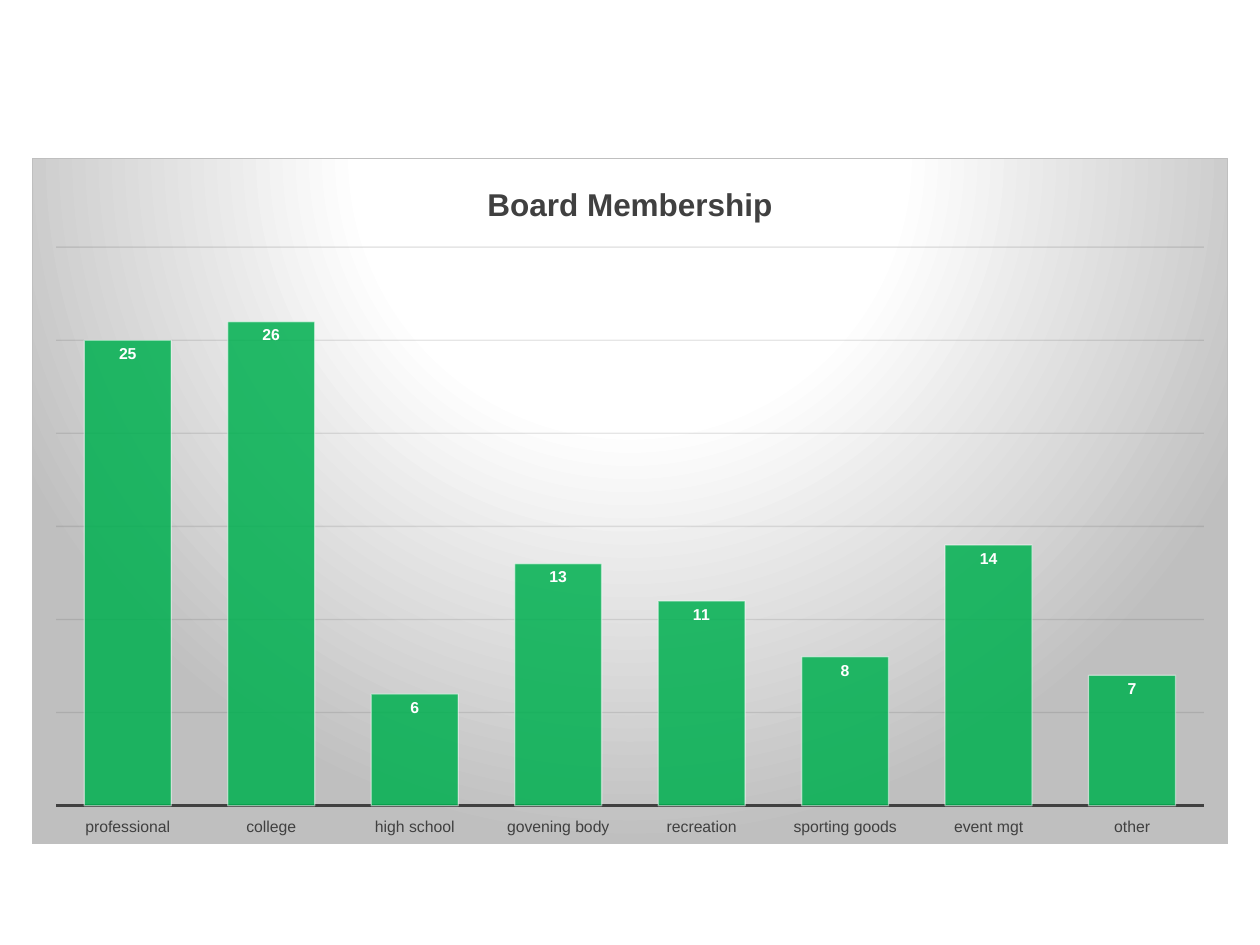
from lxml import etree
from pptx import Presentation
from pptx.chart.data import CategoryChartData
from pptx.dml.color import RGBColor
from pptx.enum.chart import XL_CHART_TYPE, XL_LABEL_POSITION, XL_TICK_LABEL_POSITION, XL_TICK_MARK
from pptx.oxml import parse_xml
from pptx.oxml.ns import nsdecls, qn
from pptx.util import Inches, Pt

COLORS = {
    "white": "FFFFFF",
    "black": "000000",
    "ink": "404040",
    "grid": "0D0D0D",
    "silver": "BFBFBF",
    "green": "00B050",
}
MEMBERS = {
    "professional": 25,
    "college": 26,
    "high school": 6,
    "govening body": 13,
    "recreation": 11,
    "sporting goods": 8,
    "event mgt": 14,
    "other": 7,
}


class Deck:
    font = "Arial"

    def __init__(self, width, height):
        self.prs = Presentation()
        self.prs.slide_width = Inches(width)
        self.prs.slide_height = Inches(height)
        self.s = self.prs.slides.add_slide(self.prs.slide_layouts[6])

    def format_font(self, font, color, **values):
        for name, value in {"name": self.font, "bold": False, **values}.items():
            setattr(font, name, value)
        font.color.rgb = RGBColor.from_string(COLORS[color])

    def paint(self, fill, color, opacity=100):
        fill.solid()
        fill.fore_color.rgb = RGBColor.from_string(COLORS[color])
        if opacity < 100:
            clr = fill._xPr.find(qn("a:solidFill"))[0]
            etree.SubElement(clr, qn("a:alpha"), val=str(opacity * 1000))

    def line(self, line, color, width, opacity=100):
        line.width = Pt(width)
        self.paint(line.fill, color, opacity)

    def backdrop(self, chart, stops, border):
        gs = "".join(
            f'<a:gs pos="{pos * 1000}"><a:srgbClr val="{COLORS[color]}"/></a:gs>'
            for pos, color in stops
        )
        sp_pr = parse_xml(
            f'<c:spPr {nsdecls("c", "a")}><a:gradFill><a:gsLst>{gs}</a:gsLst>'
            '<a:path path="circle"><a:fillToRect l="50000" t="-80000" r="50000" b="180000"/></a:path>'
            f'</a:gradFill><a:ln w="{Pt(0.75)}"><a:solidFill><a:srgbClr val="{COLORS[border]}"/>'
            "</a:solidFill></a:ln></c:spPr>"
        )
        chart._chartSpace.find(qn("c:chart")).addnext(sp_pr)

    def place_plot(self, chart, x, y, w, h):
        area = chart._chartSpace.chart.plotArea
        for old in area.findall(qn("c:layout")):
            area.remove(old)
        sizes = "".join(f'<c:{k} val="{v}"/>' for k, v in zip("xywh", (x, y, w, h)))
        area.insert(0, parse_xml(
            f'<c:layout {nsdecls("c")}><c:manualLayout><c:layoutTarget val="inner"/>'
            f'<c:xMode val="edge"/><c:yMode val="edge"/>{sizes}</c:manualLayout></c:layout>'
        ))

    def column_chart(self, title, values, left, top, width, height):
        data = CategoryChartData()
        data.categories = list(values)
        data.add_series("Series 1", list(values.values()))
        chart = self.s.shapes.add_chart(
            XL_CHART_TYPE.COLUMN_CLUSTERED,
            Inches(left), Inches(top), Inches(width), Inches(height), data,
        ).chart
        chart.has_legend = False
        self.format_font(chart.font, "black", size=Pt(10))
        self.backdrop(chart, [(0, "white"), (39, "white"), (100, "silver")], "silver")
        self.place_plot(chart, 0.02, 0.13, 0.96, 0.815)

        chart.has_title = True
        p = chart.chart_title.text_frame.paragraphs[0]
        r = p.add_run()
        r.text = title
        self.format_font(r.font, "ink", size=Pt(18), bold=True)
        chart.chart_title.include_in_layout = False

        cat, val = chart.category_axis, chart.value_axis
        for axis, formats in (
            (cat, {"major_tick_mark": XL_TICK_MARK.NONE, "minor_tick_mark": XL_TICK_MARK.NONE,
                   "tick_label_position": XL_TICK_LABEL_POSITION.LOW}),
            (val, {"visible": False, "minimum_scale": 0, "maximum_scale": 30, "major_unit": 5}),
        ):
            for name, value in formats.items():
                setattr(axis, name, value)
        self.format_font(cat.tick_labels.font, "ink", size=Pt(9))
        self.line(cat.format.line, "ink", 1.5)
        self.line(val.major_gridlines.format.line, "grid", 0.75, 10)

        plot = chart.plots[0]
        plot.gap_width = 65
        plot.vary_by_categories = False
        series = plot.series[0]
        self.paint(series.format.fill, "green", 85)
        self.line(series.format.line, "white", 0.75, 50)
        labels = series.data_labels
        labels.show_value = True
        labels.position = XL_LABEL_POSITION.INSIDE_END
        self.format_font(labels.font, "white", size=Pt(9), bold=True)


def main():
    deck = Deck(10, 7.5)
    deck.column_chart("Board Membership", MEMBERS, 0.25, 1.25, 9.5, 5.45)
    deck.prs.save("out.pptx")


if __name__ == "__main__":
    main()
